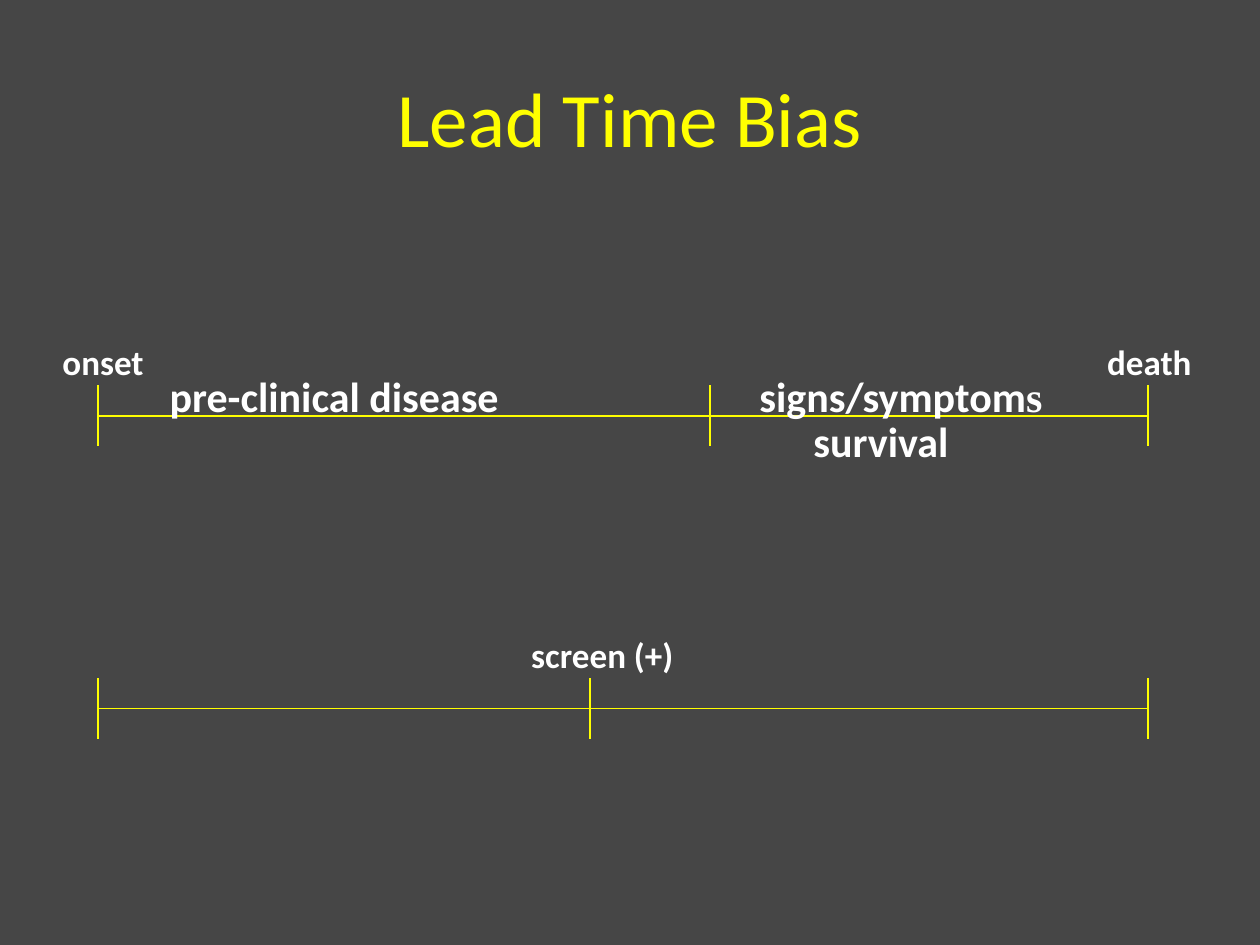
from pptx import Presentation
from pptx.dml.color import RGBColor
from pptx.enum.shapes import MSO_CONNECTOR as Link
from pptx.enum.text import MSO_ANCHOR as Anchor, MSO_AUTO_SIZE as Fit, PP_ALIGN as Align
from pptx.oxml.ns import qn
from pptx.util import Cm, Pt
from lxml.etree import SubElement

GREY = RGBColor(0x46, 0x46, 0x46)
YELLOW = RGBColor(0xFF, 0xFF, 0x00)
WHITE = RGBColor(0xFF, 0xFF, 0xFF)

HEAD = {"name": "Calibri", "size": Pt(44), "bold": False}
SMALL = {"name": "Calibri", "size": Pt(20), "bold": True}
LARGE = {"name": "Calibri", "size": Pt(24), "bold": True}
SERIF = {**LARGE, "name": "Times New Roman"}

# Time line boxes: left, top, width, height in cm
ONSET_BOX = (1.98, 7.77, 21.16, 1.22)
SCREEN_BOX = (1.98, 13.67, 21.16, 1.22)

# Labels: left and top from the box corner, width, height, runs
ONSET_TAGS = [
    (-0.97, -1.04, 2.16, 1.1, [("onset", SMALL)]),
    (20.09, -1.04, 2.29, 1.1, [("death", SMALL)]),
    (1.19, -0.43, 7.21, 1.27, [("pre-clinical disease", LARGE)]),
    (13.08, -0.43, 6.27, 1.27, [("signs/symptom", LARGE), ("s", SERIF)]),
    (14.17, 0.48, 3.28, 1.27, [("survival", LARGE)]),
]
SCREEN_TAGS = [(8.48, -1.02, 3.38, 1.1, [("screen (+)", SMALL)])]


def add_run(para, text, style, color):
    run = para.add_run()
    run.text = text
    for key, value in style.items():
        setattr(run.font, key, value)
    run.font.color.rgb = color


def add_title(slide, text, box):
    title = slide.shapes.title
    for key, value in zip(("left", "top", "width", "height"), box):
        setattr(title, key, Cm(value))
    frame = title.text_frame
    frame.vertical_anchor = Anchor.MIDDLE
    para = frame.paragraphs[0]
    para.alignment = Align.CENTER
    add_run(para, text, HEAD, YELLOW)


def add_line(slide, *ends):
    line = slide.shapes.add_connector(Link.STRAIGHT, *map(Cm, ends))
    line.line.color.rgb = YELLOW
    line.line.width = Pt(1)
    SubElement(line._element.spPr, qn("a:effectLst"))


def add_tag(slide, box, runs):
    frame = slide.shapes.add_textbox(*map(Cm, box)).text_frame
    frame.word_wrap = False
    frame.auto_size = Fit.SHAPE_TO_FIT_TEXT
    for text, style in runs:
        add_run(frame.paragraphs[0], text, style, WHITE)


def add_timeline(slide, box, split, tags):
    """Draw an axis with ticks at both ends and at split, plus its labels."""
    left, top, width, height = box
    mid = top + height / 2
    add_line(slide, left, mid, left + width, mid)
    for step in (0, split, width):
        add_line(slide, left + step, top, left + step, top + height)
    for x, y, w, h, runs in tags:
        add_tag(slide, (left + x, top + y, w, h), runs)


def main():
    deck = Presentation()
    deck.slide_width, deck.slide_height = Cm(25.4), Cm(19.05)
    slide = deck.slides.add_slide(deck.slide_layouts[5])
    fill = slide.background.fill
    fill.solid()
    fill.fore_color.rgb = GREY
    add_title(slide, "Lead Time Bias", (1.27, 0.76, 22.86, 3.18))
    add_timeline(slide, ONSET_BOX, 12.34, ONSET_TAGS)
    add_timeline(slide, SCREEN_BOX, 9.91, SCREEN_TAGS)
    deck.save("out.pptx")


if __name__ == "__main__":
    main()
